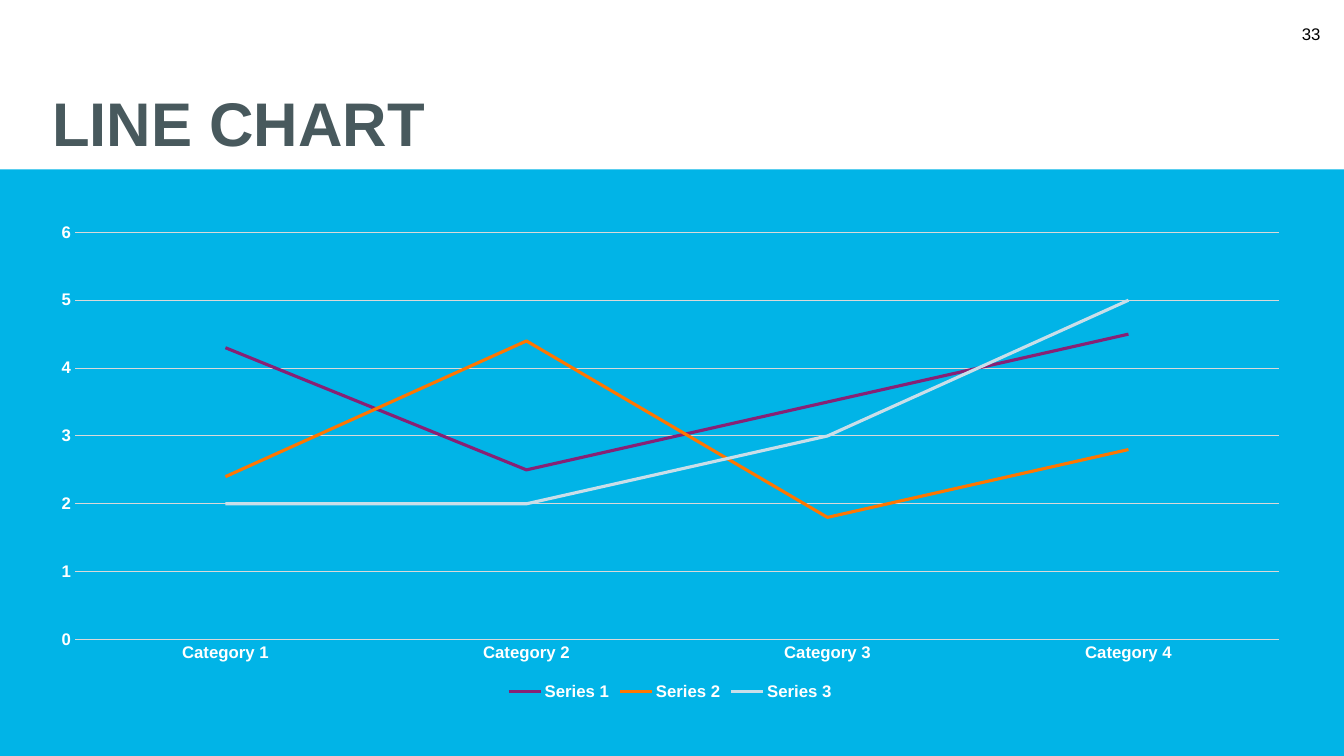
from pptx import Presentation
from pptx.chart.data import CategoryChartData
from pptx.dml.color import RGBColor
from pptx.enum.chart import XL_CHART_TYPE, XL_LEGEND_POSITION, XL_TICK_MARK
from pptx.enum.shapes import MSO_SHAPE
from pptx.enum.text import MSO_ANCHOR, MSO_AUTO_SIZE, PP_ALIGN
from pptx.util import Pt

COLORS = {
    "band": "01B4E7", "title": "48595D", "black": "000000", "white": "FFFFFF",
    "grid": "D9D9D9", "purple": "872175", "orange": "FF7600", "pale": "C9DEE9",
}
CATEGORIES = [f"Category {number}" for number in range(1, 5)]
SERIES = [
    ("Series 1", "purple", (4.3, 2.5, 3.5, 4.5)),
    ("Series 2", "orange", (2.4, 4.4, 1.8, 2.8)),
    ("Series 3", "pale", (2, 2, 3, 5)),
]


def color(name):
    return RGBColor.from_string(COLORS[name])


def set_values(target, values):
    for name, value in values.items():
        setattr(target, name, value)


class SlideBuilder:
    font_name = "Arial"

    def __init__(self, page):
        self.page = page

    def style_font(self, font, size, color_name, bold=False):
        set_values(font, {"name": self.font_name, "size": Pt(size), "bold": bold})
        font.color.rgb = color(color_name)

    def style_line(self, line, color_name, width):
        line.color.rgb = color(color_name)
        line.width = Pt(width)

    def fill_text(self, box, text, size, color_name, bold=False, frame=None, paragraph=None):
        set_values(box.text_frame, {"word_wrap": True, "auto_size": MSO_AUTO_SIZE.NONE, **(frame or {})})
        para = box.text_frame.paragraphs[0]
        set_values(para, paragraph or {})
        span = para.add_run()
        span.text = text
        self.style_font(span.font, size, color_name, bold)

    def title(self, text, left, top, width, height):
        box = self.page.shapes.title
        set_values(box, {"left": Pt(left), "top": Pt(top), "width": Pt(width), "height": Pt(height)})
        self.fill_text(
            box, text, 44, "title", bold=True,
            frame={"vertical_anchor": MSO_ANCHOR.BOTTOM, "margin_left": Pt(7.2),
                   "margin_top": 0, "margin_right": Pt(7.2), "margin_bottom": Pt(7.2)},
            paragraph={"alignment": PP_ALIGN.LEFT, "line_spacing": 0.9},
        )

    def band(self, *place):
        shape = self.page.shapes.add_shape(MSO_SHAPE.RECTANGLE, *map(Pt, place))
        shape.shadow.inherit = False
        shape.fill.solid()
        shape.fill.fore_color.rgb = color("band")
        shape.line.fill.background()

    def page_number(self, text, *place):
        box = self.page.shapes.add_textbox(*map(Pt, place))
        self.fill_text(box, text, 12, "black", frame={"vertical_anchor": MSO_ANCHOR.MIDDLE},
                       paragraph={"alignment": PP_ALIGN.RIGHT})

    def line_chart(self, categories, series, *place):
        data = CategoryChartData()
        data.categories = categories
        for name, _, values in series:
            data.add_series(name, values)
        chart = self.page.shapes.add_chart(XL_CHART_TYPE.LINE, *map(Pt, place), data).chart
        set_values(chart, {"has_title": False, "has_legend": True})
        self.style_font(chart.font, 10, "white", bold=True)

        # Series lines
        plot = chart.plots[0]
        plot.vary_by_categories = False
        for drawn, (_, color_name, _) in zip(plot.series, series):
            drawn.smooth = False
            self.style_line(drawn.format.line, color_name, 2.25)

        # Axes and gridlines
        for axis in (chart.category_axis, chart.value_axis):
            set_values(axis, {"major_tick_mark": XL_TICK_MARK.NONE, "minor_tick_mark": XL_TICK_MARK.NONE})
            self.style_font(axis.tick_labels.font, 12, "white", bold=True)
        self.style_line(chart.category_axis.format.line, "grid", 0.75)
        set_values(chart.value_axis, {"minimum_scale": 0, "maximum_scale": 6, "major_unit": 1})
        chart.value_axis.format.line.fill.background()
        self.style_line(chart.value_axis.major_gridlines.format.line, "grid", 0.75)

        # Legend
        set_values(chart.legend, {"position": XL_LEGEND_POSITION.BOTTOM, "include_in_layout": False})
        self.style_font(chart.legend.font, 12, "white", bold=True)


def main():
    deck = Presentation()
    set_values(deck, {"slide_width": Pt(960), "slide_height": Pt(540)})
    builder = SlideBuilder(deck.slides.add_slide(deck.slide_layouts[5]))

    # Header
    builder.title("LINE CHART", 30.2, 0, 905.8, 121)
    builder.page_number("33", 917.3, 9.4, 33.1, 28.8)

    # Chart on its colour band
    builder.band(0, 121, 960, 419)
    builder.line_chart(CATEGORIES, SERIES, 25.9, 152.6, 905.8, 350.6)

    deck.save("out.pptx")


if __name__ == "__main__":
    main()
